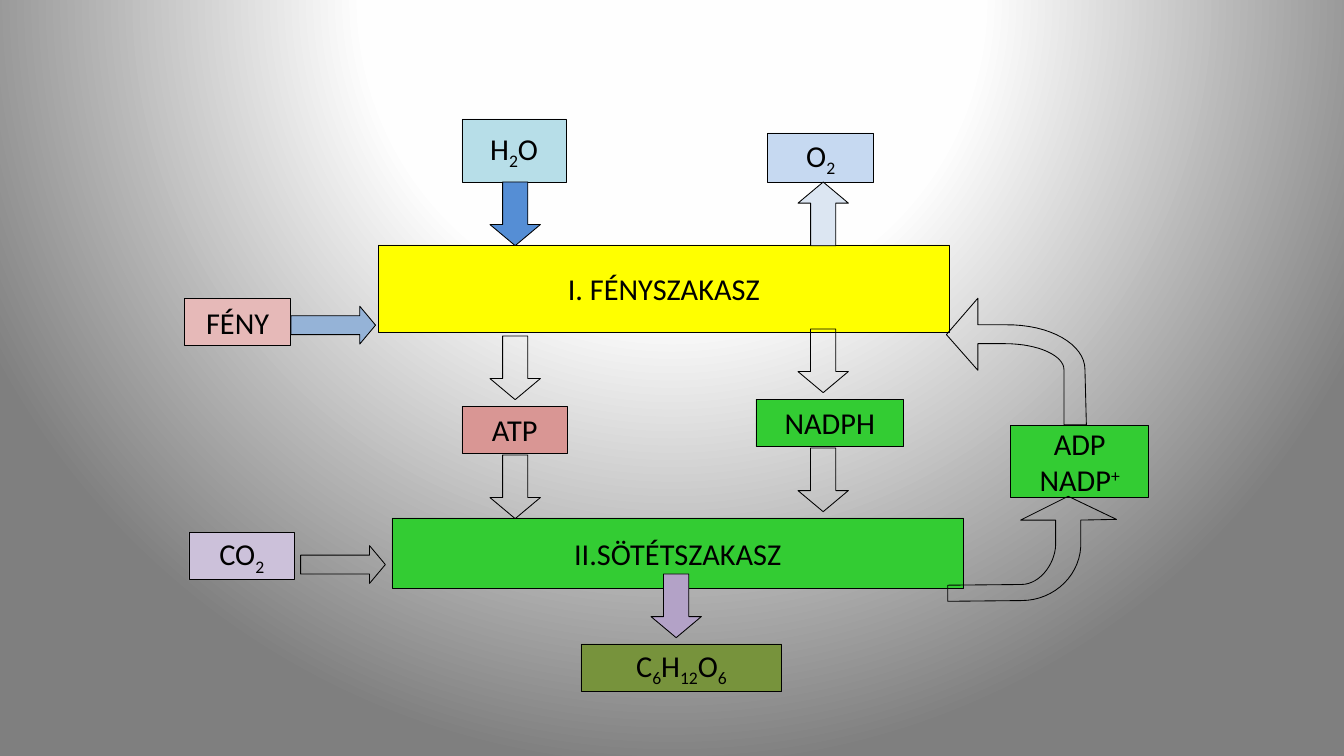
"""Draw the two stages of photosynthesis as a flow chart."""
from dataclasses import dataclass
from itertools import groupby

from pptx import Presentation
from pptx.dml.color import RGBColor
from pptx.enum.shapes import MSO_SHAPE
from pptx.enum.text import MSO_ANCHOR, PP_ALIGN
from pptx.oxml import parse_xml
from pptx.oxml.ns import nsdecls
from pptx.shapes.autoshape import Shape
from pptx.slide import Slide
from pptx.util import Emu, Inches, Pt

RECT = MSO_SHAPE.RECTANGLE
ARROW = MSO_SHAPE.DOWN_ARROW
MIDDLE = MSO_ANCHOR.MIDDLE
CENTER = PP_ALIGN.CENTER

WIDTH, HEIGHT = Inches(16), Inches(9)
COLS = 192
CELL = WIDTH / COLS

BLACK = RGBColor(0x00, 0x00, 0x00)
YELLOW = RGBColor(0xFF, 0xFF, 0x00)
GREEN = RGBColor(0x33, 0xCC, 0x33)
RED = RGBColor(0xD9, 0x96, 0x94)
PINK = RGBColor(0xE6, 0xB9, 0xB8)
LILAC = RGBColor(0xCC, 0xC1, 0xDA)
PURPLE = RGBColor(0xB3, 0xA2, 0xC7)
OLIVE = RGBColor(0x77, 0x93, 0x3C)
AQUA = RGBColor(0xB7, 0xDE, 0xE8)
SKY = RGBColor(0xC6, 0xD9, 0xF1)
PALE = RGBColor(0xDC, 0xE6, 0xF2)
STEEL = RGBColor(0x95, 0xB3, 0xD7)
BLUE = RGBColor(0x55, 0x8E, 0xD5)
STOPS = ((0, RGBColor(0xFF, 0xFF, 0xFF)), (40, RGBColor(0xFE, 0xFE, 0xFE)),
         (100, RGBColor(0x7F, 0x7F, 0x7F)))

FONT = "Calibri"
SIZE = Pt(26)
SUB, SUPER = -25, 30


@dataclass(frozen=True)
class Box:
    """A labelled box, placed in grid cells."""
    lines: tuple[str, ...]
    col: float
    row: float
    wide: float
    high: float
    fill: RGBColor


@dataclass(frozen=True)
class Arrow:
    """A block arrow, placed in grid cells before it is turned."""
    col: float
    row: float
    fill: RGBColor | None = None
    turn: int = 0
    wide: float = 7.2
    high: float = 9.1


SMALL = (15.1, 6.8)
SIDE = (270, 5.4, 12.1)

BOXES = (
    Box(("I. FÉNYSZAKASZ",), 54, 35, 81.7, 12.5, YELLOW),
    Box(("II.SÖTÉTSZAKASZ",), 56, 74, 81.7, 10, GREEN),
    Box(("ATP",), 66, 58, *SMALL, RED),
    Box(("NADPH",), 108, 57, 21.1, 6.8, GREEN),
    Box(("FÉNY",), 26.4, 42.6, *SMALL, PINK),
    Box(("CO2",), 27, 76, *SMALL, LILAC),
    Box(("ADP", "NADP+"), 144.4, 60.8, 19.7, 10.2, GREEN),
    Box(("C6H12O6",), 83, 92, 28.7, 6.8, OLIVE),
    Box(("H2O",), 66, 17, 14.9, 9, AQUA),
    Box(("O2",), 109.7, 19, 15.1, 7, SKY),
)

ARROWS = (
    Arrow(70, 48),
    Arrow(70, 65),
    Arrow(114, 47),
    Arrow(114, 64),
    Arrow(44.9, 40.4, STEEL, *SIDE),
    Arrow(46.3, 74.6, None, *SIDE),
    Arrow(93, 82, PURPLE),
    Arrow(70, 26, BLUE),
    Arrow(114, 26, PALE, 180),
)

BENDS = (
    ((135.2, 47.8), (139.7, 42.6), (139.7, 46.4), (143.6, 46.4),
     (150, 46.3, 155, 49.2, 155, 52.8), (155.2, 60.7), (152, 60.7),
     (152, 52.8), (152, 50.8, 148.3, 49.1, 143.6, 49.1),
     (139.7, 49.1), (139.7, 52.9)),
    ((152.6, 70.9), (159.5, 74.2), (154.4, 74.3), (154.4, 77.3),
     (154.6, 82, 150.7, 85.8, 145.9, 85.8), (135.4, 85.9), (135.4, 83.6),
     (145.9, 83.5), (148.7, 83.5, 151, 80.2, 150.8, 77.3),
     (150.8, 74.3), (145.8, 74.3)),
)


def cells(count: float) -> Emu:
    """Turn grid cells into a length."""
    return Emu(round(count * CELL))


def shift(sign: str) -> int:
    """Give the baseline shift of a sign, in percent."""
    return SUB if sign.isdigit() else SUPER if sign == "+" else 0


def style(shape: Shape, fill: RGBColor | None) -> None:
    """Set the fill and the thin black outline."""
    shape.shadow.inherit = False
    if fill is None:
        shape.fill.background()
    else:
        shape.fill.solid()
        shape.fill.fore_color.rgb = fill
    shape.line.color.rgb = BLACK
    shape.line.width = Pt(0.75)


def draw_box(slide: Slide, box: Box) -> None:
    """Add a box and its label."""
    place = map(cells, (box.col, box.row, box.wide, box.high))
    shape = slide.shapes.add_shape(RECT, *place)
    style(shape, box.fill)
    frame = shape.text_frame
    frame.word_wrap = False
    frame.vertical_anchor = MIDDLE
    frame.margin_left = frame.margin_right = Inches(0.14)
    frame.margin_top = frame.margin_bottom = Inches(0.07)
    for index, line in enumerate(box.lines):
        para = frame.add_paragraph() if index else frame.paragraphs[0]
        para.alignment = CENTER
        for base, signs in groupby(line, shift):
            run = para.add_run()
            run.text = "".join(signs)
            run.font.name = FONT
            run.font.size = SIZE
            run.font.color.rgb = BLACK
            if base:
                run.font._element.set("baseline", str(base * 1000))


def draw_arrow(slide: Slide, arrow: Arrow) -> None:
    """Add a block arrow."""
    place = map(cells, (arrow.col, arrow.row, arrow.wide, arrow.high))
    shape = slide.shapes.add_shape(ARROW, *place)
    shape.adjustments[0] = 0.5
    shape.adjustments[1] = 0.418
    shape.rotation = arrow.turn
    style(shape, arrow.fill)


def trace(bend: tuple, parts: int = 16) -> list[tuple[int, int]]:
    """List the points of an outline of lines and cubic curves."""
    points = [bend[0]]
    for step in bend[1:]:
        if len(step) == 2:
            points.append(step)
            continue
        knots = (points[-1], step[:2], step[2:4], step[4:])
        for part in range(1, parts + 1):
            t = part / parts
            u = 1 - t
            shares = (u ** 3, 3 * u * u * t, 3 * u * t * t, t ** 3)
            points.append(tuple(sum(s * k[axis] for s, k in zip(shares, knots))
                                for axis in (0, 1)))
    return [(cells(x), cells(y)) for x, y in points]


def draw_bend(slide: Slide, bend: tuple) -> None:
    """Add a curved arrow."""
    first, *rest = trace(bend)
    form = slide.shapes.build_freeform(*first)
    form.add_line_segments(rest, close=True)
    style(form.convert_to_shape(), None)


def paint(slide: Slide) -> None:
    """Give the slide a round gradient centred above its top edge."""
    stops = "".join(f'<a:gs pos="{at * 1000}"><a:srgbClr val="{tint}"/></a:gs>'
                    for at, tint in STOPS)
    back = parse_xml(
        f'<p:bg {nsdecls("p", "a")}><p:bgPr><a:gradFill rotWithShape="1">'
        f'<a:gsLst>{stops}</a:gsLst><a:path path="circle">'
        '<a:fillToRect l="50000" t="-80000" r="50000" b="180000"/></a:path>'
        '</a:gradFill><a:effectLst/></p:bgPr></p:bg>')
    slide._element.cSld.insert(0, back)


def main() -> None:
    """Build and save the slide."""
    deck = Presentation()
    deck.slide_width, deck.slide_height = WIDTH, HEIGHT
    slide = deck.slides.add_slide(deck.slide_layouts[6])
    paint(slide)
    for draw, items in ((draw_box, BOXES), (draw_arrow, ARROWS),
                        (draw_bend, BENDS)):
        for item in items:
            draw(slide, item)
    deck.save("out.pptx")


if __name__ == "__main__":
    main()
